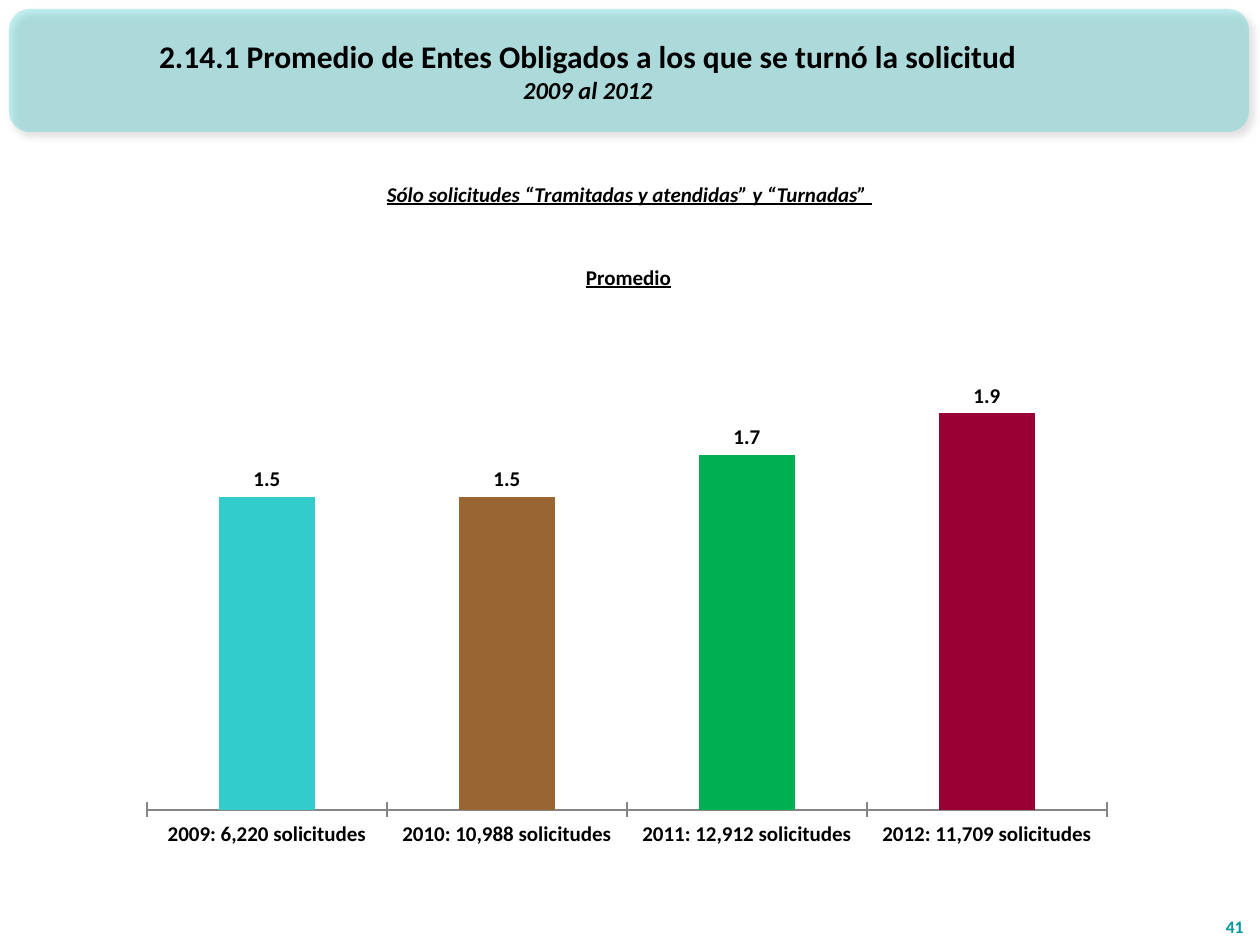
from dataclasses import dataclass

from lxml.etree import SubElement
from pptx import Presentation
from pptx.chart.data import CategoryChartData
from pptx.dml.color import RGBColor
from pptx.enum.chart import XL_CHART_TYPE, XL_LABEL_POSITION, XL_TICK_LABEL_POSITION, XL_TICK_MARK
from pptx.enum.shapes import MSO_SHAPE
from pptx.enum.text import MSO_ANCHOR, MSO_AUTO_SIZE, PP_ALIGN
from pptx.oxml import parse_xml
from pptx.oxml.ns import nsdecls, qn
from pptx.util import Emu, Pt

EMU_PER_PX = 914400 / 126
FONT = "Calibri"
COLORS = {
    "text": "000000",
    "banner": "33CCCC",
    "page": "009999",
    "axis": "868686",
    "2009": "33CCCC",
    "2010": "996633",
    "2011": "00B050",
    "2012": "990033",
}


@dataclass(frozen=True)
class Box:
    left: int
    top: int
    width: int
    height: int

    def emu(self) -> tuple[Emu, Emu, Emu, Emu]:
        return px(self.left), px(self.top), px(self.width), px(self.height)


@dataclass(frozen=True)
class Line:
    text: str
    size: int
    italic: bool = False
    underline: bool = False
    color: str = "text"


@dataclass(frozen=True)
class Label:
    box: Box
    line: Line
    align: PP_ALIGN = PP_ALIGN.CENTER
    anchor: MSO_ANCHOR = MSO_ANCHOR.TOP


@dataclass(frozen=True)
class Year:
    year: str
    requests: str
    average: float


BANNER = Box(9, 9, 1240, 123)
TITLE = Box(10, 11, 1156, 119)
CHART = Box(127, 288, 998, 571)
PLOT = Box(147, 288, 960, 522)
TITLE_LINES = [
    Line("2.14.1 Promedio de Entes Obligados a los que se turnó la solicitud", 18),
    Line("2009 al 2012", 14, italic=True),
]
LABELS = [
    Label(Box(291, 175, 677, 38),
          Line("Sólo solicitudes “Tramitadas y atendidas” y “Turnadas” ", 12, italic=True, underline=True)),
    Label(Box(476, 258, 305, 38), Line("Promedio", 12, underline=True)),
    Label(Box(1206, 893, 50, 50), Line("41", 10, color="page"), PP_ALIGN.RIGHT, MSO_ANCHOR.BOTTOM),
]
YEARS = [
    Year("2009", "6,220", 1.5),
    Year("2010", "10,988", 1.5),
    Year("2011", "12,912", 1.7),
    Year("2012", "11,709", 1.9),
]


def px(length: int) -> Emu:
    return Emu(round(length * EMU_PER_PX))


def rgb(name: str) -> RGBColor:
    return RGBColor.from_string(COLORS[name])


def write(frame, lines: list[Line], align: PP_ALIGN, anchor: MSO_ANCHOR) -> None:
    frame.text = "\n".join(line.text for line in lines)
    frame.word_wrap = True
    frame.auto_size = MSO_AUTO_SIZE.NONE
    frame.vertical_anchor = anchor
    for paragraph, line in zip(frame.paragraphs, lines):
        paragraph.alignment = align
        font = paragraph.runs[0].font
        font.name = FONT
        font.size = Pt(line.size)
        font.bold = True
        font.italic = line.italic
        font.underline = line.underline
        font.color.rgb = rgb(line.color)


def add_banner(slide) -> None:
    banner = slide.shapes.add_shape(MSO_SHAPE.ROUNDED_RECTANGLE, *BANNER.emu())
    banner.fill.solid()
    banner.fill.fore_color.rgb = rgb("banner")
    banner.line.fill.background()
    properties = banner._element.spPr
    SubElement(properties.find(".//" + qn("a:solidFill"))[0], qn("a:alpha"), val="30000")
    properties.append(parse_xml(
        f'<a:effectLst {nsdecls("a")}>'
        f'<a:outerShdw blurRad="{Pt(4)}" dist="{Pt(3)}" dir="2700000" algn="tl" rotWithShape="0">'
        f'<a:srgbClr val="{COLORS["text"]}"><a:alpha val="40000"/></a:srgbClr>'
        '</a:outerShdw></a:effectLst>'))


def place_title(slide) -> None:
    title = slide.shapes.title
    title.left, title.top, title.width, title.height = TITLE.emu()
    write(title.text_frame, TITLE_LINES, PP_ALIGN.CENTER, MSO_ANCHOR.MIDDLE)
    slide.shapes._spTree.append(title._element)


def add_label(slide, label: Label) -> None:
    frame = slide.shapes.add_textbox(*label.box.emu()).text_frame
    write(frame, [label.line], label.align, label.anchor)


def fix_plot(chart) -> None:
    fractions = {
        "x": (PLOT.left - CHART.left) / CHART.width,
        "y": (PLOT.top - CHART.top) / CHART.height,
        "w": PLOT.width / CHART.width,
        "h": PLOT.height / CHART.height,
    }
    modes = '<c:layoutTarget val="inner"/><c:xMode val="edge"/><c:yMode val="edge"/>'
    sizes = "".join(f'<c:{key} val="{value:.3f}"/>' for key, value in fractions.items())
    plot_area = chart._chartSpace.chart.plotArea
    for layout in plot_area.findall(qn("c:layout")):
        plot_area.remove(layout)
    plot_area.insert(0, parse_xml(
        f'<c:layout {nsdecls("c")}><c:manualLayout>{modes}{sizes}</c:manualLayout></c:layout>'))


def add_average_chart(slide) -> None:
    averages = CategoryChartData(number_format="0.0")
    averages.categories = [f"{item.year}: {item.requests} solicitudes" for item in YEARS]
    averages.add_series("Promedio", [item.average for item in YEARS])
    chart = slide.shapes.add_chart(XL_CHART_TYPE.COLUMN_CLUSTERED, *CHART.emu(), averages).chart
    chart.has_title = False
    chart.has_legend = False
    chart.font.name = FONT
    chart.font.size = Pt(12)
    chart.font.bold = True
    chart.font.color.rgb = rgb("text")

    scale = chart.value_axis
    scale.minimum_scale, scale.maximum_scale, scale.major_unit = 0, 2.5, 0.5
    scale.has_major_gridlines = False
    scale.visible = False
    years_axis = chart.category_axis
    years_axis.major_tick_mark = XL_TICK_MARK.CROSS
    years_axis.tick_label_position = XL_TICK_LABEL_POSITION.LOW
    years_axis.format.line.color.rgb = rgb("axis")
    years_axis.format.line.width = Pt(1)

    columns = chart.plots[0]
    columns.gap_width = 150
    columns.vary_by_categories = False
    columns.has_data_labels = True
    values = columns.data_labels
    values.show_value = True
    values.number_format = "0.0"
    values.number_format_is_linked = False
    values.position = XL_LABEL_POSITION.OUTSIDE_END
    for index, item in enumerate(YEARS):
        fill = columns.series[0].points[index].format.fill
        fill.solid()
        fill.fore_color.rgb = rgb(item.year)
    fix_plot(chart)


def main() -> None:
    presentation = Presentation()
    presentation.slide_width, presentation.slide_height = px(1260), px(945)
    slide = presentation.slides.add_slide(presentation.slide_layouts[5])
    add_banner(slide)
    place_title(slide)
    add_average_chart(slide)
    for label in LABELS:
        add_label(slide, label)
    presentation.save("out.pptx")


if __name__ == "__main__":
    main()
